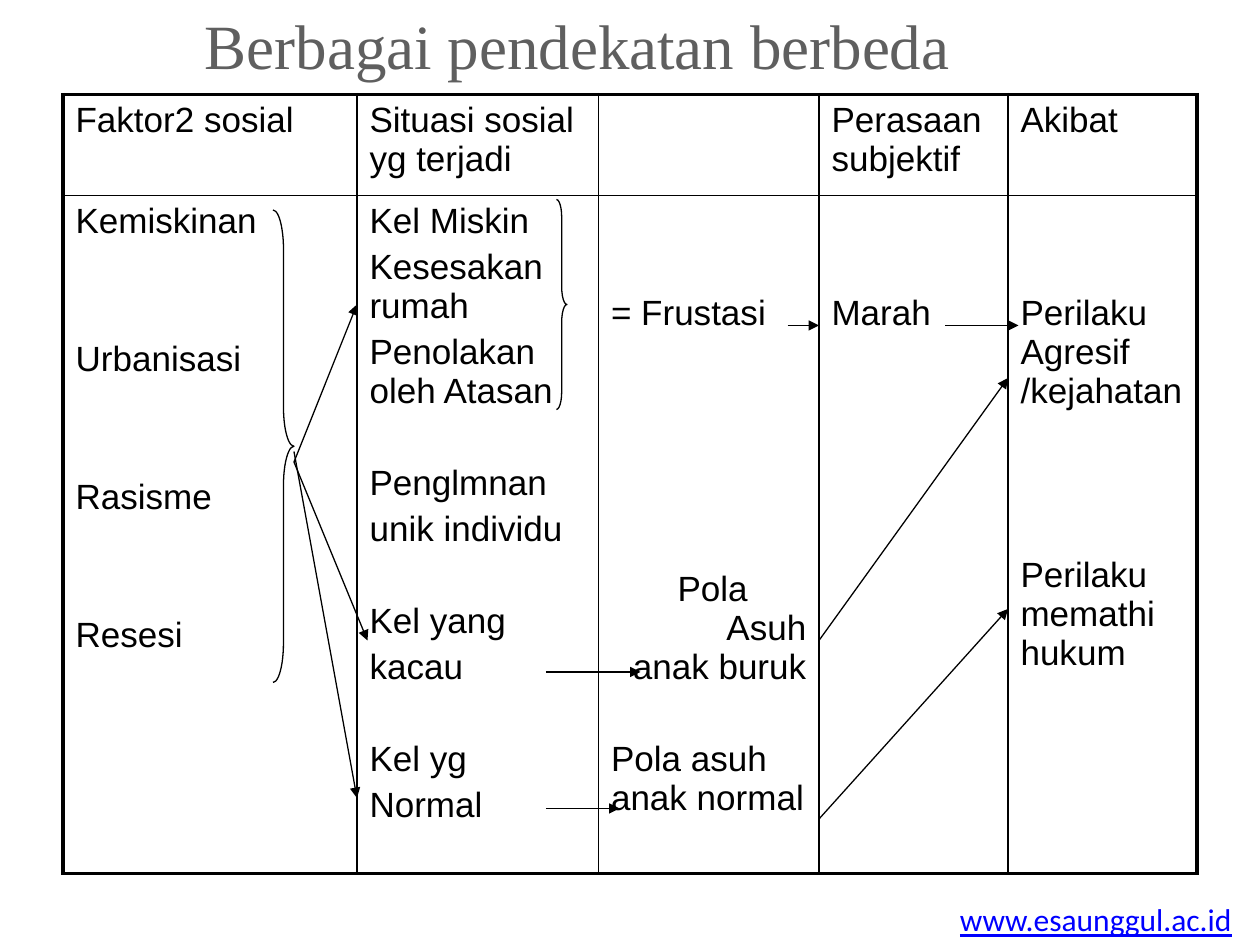
import pptx
import pptx.dml.color
import pptx.enum.shapes
import pptx.enum.text
import pptx.oxml
import pptx.oxml.ns
import pptx.util
from lxml import etree

Pt = pptx.util.Pt
ALIGN = pptx.enum.text.PP_ALIGN
BLACK = pptx.dml.color.RGBColor(0x00, 0x00, 0x00)
GREY = pptx.dml.color.RGBColor(0x5F, 0x5F, 0x5F)
BLUE = pptx.dml.color.RGBColor(0x00, 0x00, 0xFF)

PARA_GAP = 4
LINE_STEP = 26.3
CELL_MARGIN = 3.6
OUTER_LINE = 2.25
INNER_LINE = 1

COLUMN_WIDTHS = [168, 138, 126, 108, 108]
ROW_HEIGHTS = [57.6, 387.4]
HEADINGS = ["Faktor2 sosial", "Situasi sosial yg terjadi", "",
            "Perasaan subjektif", "Akibat"]

FACTORS = [("Kemiskinan", 0), ("Urbanisasi", 2), ("Rasisme", 2), ("Resesi", 2)]
SITUATIONS = [("Kel Miskin", 0), ("Kesesakan rumah", 0),
              ("Penolakan oleh Atasan", 0), ("Penglmnan", 1),
              ("unik individu", 0), ("Kel yang", 1), ("kacau", 0),
              ("Kel yg", 1), ("Normal", 0)]
PATTERNS = [("= Frustasi", 2), ("Pola", 5, ALIGN.LEFT, 38),
            ("Asuh", 0, ALIGN.RIGHT, 0, 0), ("anak buruk", 0, ALIGN.RIGHT, 0, 0),
            ("Pola asuh anak normal", 1)]
FEELINGS = [("Marah", 2)]
RESULTS = [("Perilaku Agresif /kejahatan", 2), ("Perilaku memathi hukum", 3)]

ARROWS = [
    (432, 312, 540, 162), (432, 414, 540, 294),
    (276, 330, 330, 330), (276, 408, 318, 408),
    (414, 132, 432, 132), (504, 132, 546, 132),
    (132, 210, 168, 120), (132, 210, 174, 312), (132, 204, 168, 402),
]
BRACES = [(120, 66, 12, 270, 1.88), (282, 60, 6, 120, 1.67)]


def add_span(para, text, name, size, color):
    span = para.add_run()
    span.text = text
    span.font.name = name
    span.font.size = Pt(size)
    span.font.color.rgb = color
    return span


def place_title(page, left, top, width, height):
    title = page.shapes.title
    title.left, title.top = Pt(left), Pt(top)
    title.width, title.height = Pt(width), Pt(height)
    frame = title.text_frame
    frame.auto_size = pptx.enum.text.MSO_AUTO_SIZE.NONE
    frame.word_wrap = False
    frame.vertical_anchor = pptx.enum.text.MSO_ANCHOR.TOP
    frame.margin_left = frame.margin_right = frame.margin_bottom = 0
    frame.margin_top = Pt(3.6)
    para = frame.paragraphs[0]
    para.alignment = ALIGN.CENTER
    add_span(para, "Berbagai pendekatan berbeda", "Times New Roman", 36, GREY)


def place_address(page, left, top, width, height):
    box = page.shapes.add_textbox(Pt(left), Pt(top), Pt(width), Pt(height))
    box.text_frame.word_wrap = False
    span = add_span(box.text_frame.paragraphs[0], "www.esaunggul.ac.id",
                    "Calibri", 18, BLUE)
    span.font.underline = True


def set_borders(cell, widths):
    properties = cell._tc.get_or_add_tcPr()
    for side in ("L", "R", "T", "B"):
        line = etree.SubElement(properties, pptx.oxml.ns.qn("a:ln" + side),
                                w=str(Pt(widths[side])))
        fill = etree.SubElement(line, pptx.oxml.ns.qn("a:solidFill"))
        etree.SubElement(fill, pptx.oxml.ns.qn("a:srgbClr"), val=str(BLACK))


def fill_cell(cell, entries):
    frame = cell.text_frame
    for index, entry in enumerate(entries):
        text, skipped, align, indent, gap = entry + (ALIGN.LEFT, 0, PARA_GAP)[len(entry) - 2:]
        if index == 0:
            para = frame.paragraphs[0]
            cell.margin_top = Pt(CELL_MARGIN + skipped * LINE_STEP)
        else:
            para = frame.add_paragraph()
            para.space_before = Pt(gap + skipped * LINE_STEP)
        para.alignment = align
        if indent:
            para._p.get_or_add_pPr().set("marL", str(Pt(indent)))
        add_span(para, text, "Arial", 20, BLACK)


def place_table(page, left, top):
    last_row, last_column = len(ROW_HEIGHTS) - 1, len(COLUMN_WIDTHS) - 1
    table = page.shapes.add_table(
        len(ROW_HEIGHTS), len(COLUMN_WIDTHS), Pt(left), Pt(top),
        Pt(sum(COLUMN_WIDTHS)), Pt(sum(ROW_HEIGHTS))).table
    table.first_row = table.horz_banding = False
    for column, width in zip(table.columns, COLUMN_WIDTHS):
        column.width = Pt(width)
    for row, height in zip(table.rows, ROW_HEIGHTS):
        row.height = Pt(height)
    headings = [[(text, 0)] if text else [] for text in HEADINGS]
    bodies = [FACTORS, SITUATIONS, PATTERNS, FEELINGS, RESULTS]
    for r, contents in enumerate([headings, bodies]):
        for c, entries in enumerate(contents):
            cell = table.cell(r, c)
            edges = {"L": c == 0, "R": c == last_column,
                     "T": r == 0, "B": r == last_row}
            set_borders(cell, {side: OUTER_LINE if outer else INNER_LINE
                               for side, outer in edges.items()})
            cell.fill.background()
            fill_cell(cell, entries)


def place_arrows(page, left, top):
    for x1, y1, x2, y2 in ARROWS:
        arrow = page.shapes.add_connector(
            pptx.enum.shapes.MSO_CONNECTOR.STRAIGHT,
            Pt(left + x1), Pt(top + y1), Pt(left + x2), Pt(top + y2))
        arrow.line.color.rgb = BLACK
        arrow.line.width = Pt(0.75)
        etree.SubElement(arrow.line._get_or_add_ln(),
                         pptx.oxml.ns.qn("a:tailEnd"), type="triangle")
        etree.SubElement(arrow._element.spPr, pptx.oxml.ns.qn("a:effectLst"))


def place_braces(page, left, top):
    for x, y, width, height, curve in BRACES:
        brace = page.shapes.add_shape(
            pptx.enum.shapes.MSO_SHAPE.RIGHT_BRACE,
            Pt(left + x), Pt(top + y), Pt(width), Pt(height))
        brace.adjustments[0] = curve
        brace.shadow.inherit = False
        brace.fill.background()
        brace.line.color.rgb = BLACK
        brace.line.width = Pt(0.75)


def main():
    deck = pptx.Presentation()
    deck.slide_width, deck.slide_height = Pt(720), Pt(540)
    page = deck.slides.add_slide(deck.slide_layouts[5])
    place_title(page, 105, 0, 450, 41)
    place_address(page, 541.5, 511, 171.5, 29)
    place_table(page, 36, 54)
    place_arrows(page, 36, 54)
    place_braces(page, 36, 54)
    deck.save("out.pptx")


if __name__ == "__main__":
    main()
